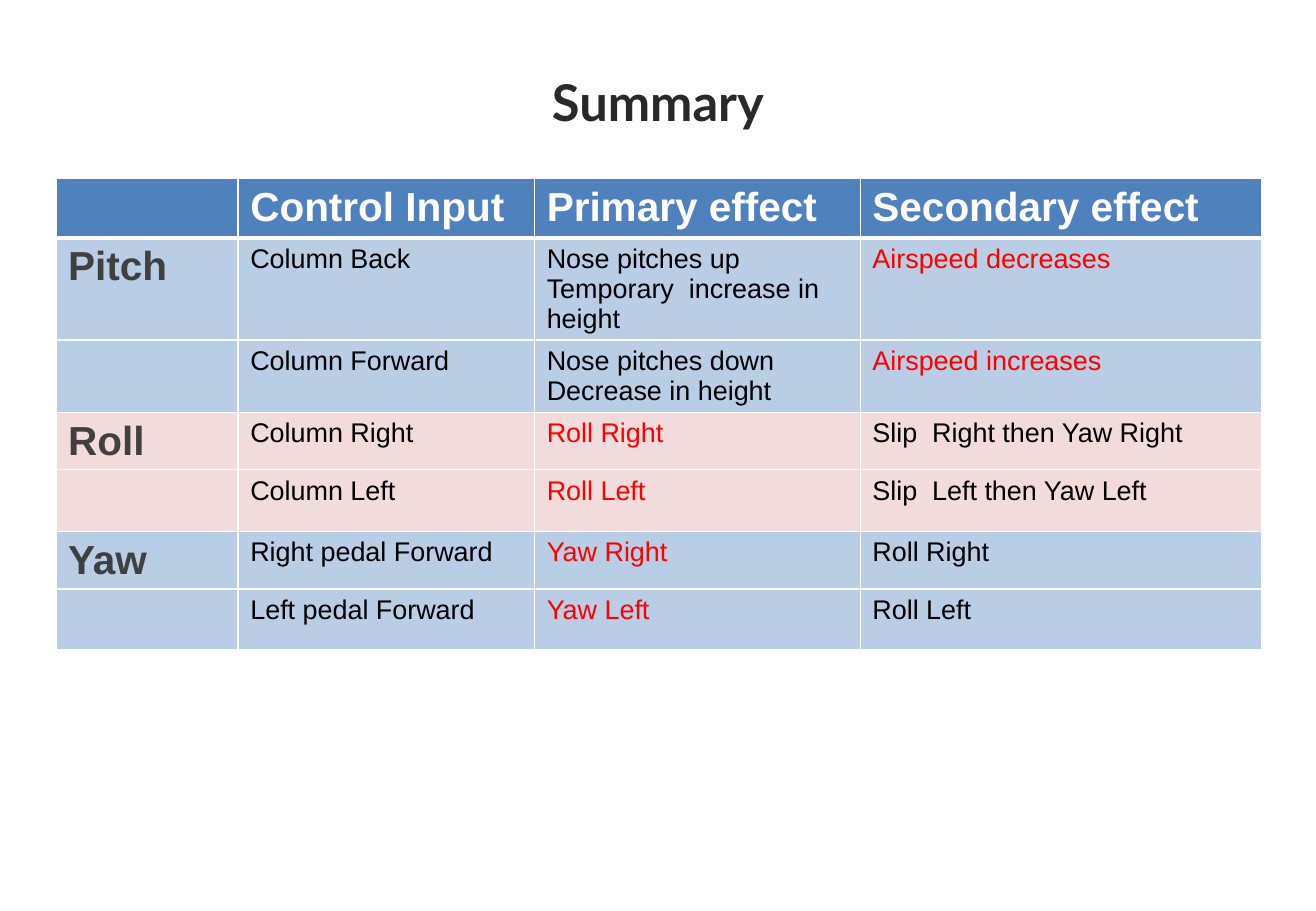
"""Build the summary slide of control inputs and their effects."""
import pptx
import pptx.dml.color
import pptx.enum.text
import pptx.oxml
import pptx.oxml.ns
import pptx.util

HUES = {
    "title": "292929", "head": "4F81BD", "blue": "B9CDE5", "pink": "F2DCDB",
    "white": "FFFFFF", "label": "404040", "text": "000000", "key": "FF0000",
}
HEADS = ["", "Control Input", "Primary effect", "Secondary effect"]
ROWS = [
    ["Pitch", "Column Back", "Nose pitches up\nTemporary  increase in height", "Airspeed decreases"],
    ["", "Column Forward", "Nose pitches down\nDecrease in height", "Airspeed increases"],
    ["Roll", "Column Right", "Roll Right", "Slip  Right then Yaw Right"],
    ["", "Column Left", "Roll Left", "Slip  Left then Yaw Left"],
    ["Yaw", "Right pedal Forward", "Yaw Right", "Roll Right"],
    ["", "Left pedal Forward", "Yaw Left", "Roll Left"],
]
BANDS = ["blue", "pink", "blue"]
KEYS = [3, 2, 2]
WIDTHS = [13.85, 22.53, 24.75, 30.47]
HEIGHTS = [6.53, 11.2, 7.87, 6.27, 6.8, 6.27, 6.67]


class Page:
    """Hold the slide and its style; lengths are percent of the slide's size."""

    def __init__(self, deck):
        self.wide, self.high = deck.slide_width, deck.slide_height
        self.slide = deck.slides.add_slide(deck.slide_layouts[5])

    def across(self, share):
        return int(self.wide * share / 100)

    def down(self, share):
        return int(self.high * share / 100)

    def color(self, name):
        return pptx.dml.color.RGBColor.from_string(HUES[name])

    def style(self, frame, size, hue, bold, face="Arial"):
        for para in frame.paragraphs:
            font = para.font
            font.name, font.size, font.bold = face, pptx.util.Pt(size), bold
            font.color.rgb = self.color(hue)

    def title(self, text, left, top, width, height):
        shape = self.slide.shapes.title
        shape.left, shape.top = self.across(left), self.down(top)
        shape.width, shape.height = self.across(width), self.down(height)
        frame = shape.text_frame
        frame.text = text
        frame.vertical_anchor = pptx.enum.text.MSO_ANCHOR.MIDDLE
        frame.paragraphs[0].alignment = pptx.enum.text.PP_ALIGN.CENTER
        self.style(frame, 30, "title", True, "Lato")

    def table(self, left, top, widths, heights):
        grid = self.slide.shapes.add_table(
            len(heights), len(widths), self.across(left), self.down(top),
            self.across(sum(widths)), self.down(sum(heights))).table
        for col, width in zip(grid.columns, widths):
            col.width = self.across(width)
        for row, height in zip(grid.rows, heights):
            row.height = self.down(height)
        return grid

    def border(self, cell, side, points):
        width = pptx.util.Pt(points)
        cell.get_or_add_tcPr().append(pptx.oxml.parse_xml(
            f'<a:ln{side} {pptx.oxml.ns.nsdecls("a")} w="{width}"><a:solidFill>'
            f'<a:srgbClr val="{HUES["white"]}"/></a:solidFill></a:ln{side}>'))

    def cell(self, cell, text, fill, size, hue, bold, lines):
        for side, points in zip("LRTB", lines):
            self.border(cell._tc, side, points)
        cell.fill.solid()
        cell.fill.fore_color.rgb = self.color(fill)
        if text:
            cell.text = text
            self.style(cell.text_frame, size, hue, bold)


def main():
    deck = pptx.Presentation()
    deck.slide_width = pptx.util.Inches(10.83)
    deck.slide_height = pptx.util.Inches(7.5)
    page = Page(deck)
    page.title("Summary", 5, 6.93, 90, 8.4)
    grid = page.table(4.25, 19.6, WIDTHS, HEIGHTS)
    for col, text in enumerate(HEADS):
        page.cell(grid.cell(0, col), text, "head", 24, "white", True, (1, 1, 1, 3))
    for row, texts in enumerate(ROWS):
        band = row // 2
        lines = (1, 1, 1 if row else 3, 1)
        for col, text in enumerate(texts):
            first = col == 0
            hue = "label" if first else "key" if col == KEYS[band] else "text"
            page.cell(grid.cell(row + 1, col), text, BANDS[band],
                      24 if first else 16, hue, first, lines)
    deck.save("out.pptx")


if __name__ == "__main__":
    main()
